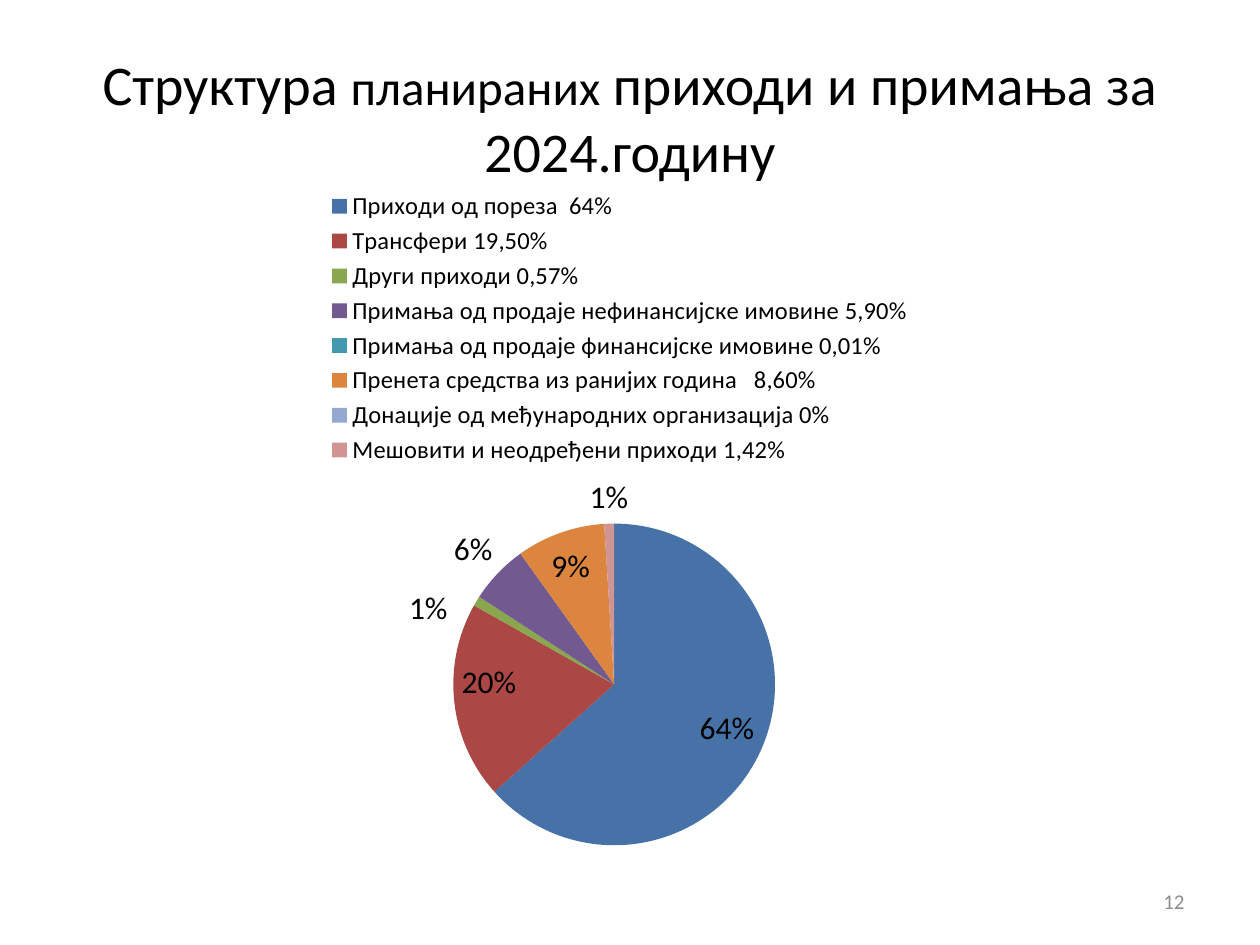
from lxml import etree
from pptx import Presentation
from pptx.chart.data import CategoryChartData
from pptx.dml.color import RGBColor
from pptx.enum.chart import XL_CHART_TYPE as ChartType, XL_LABEL_POSITION as LabelPos, XL_LEGEND_POSITION as LegendPos
from pptx.enum.text import MSO_ANCHOR as Anchor, PP_ALIGN as Align
from pptx.oxml import parse_xml
from pptx.oxml.ns import qn
from pptx.util import Inches, Pt

BLACK = RGBColor(0x00, 0x00, 0x00)
GRAY = RGBColor(0x8C, 0x8C, 0x8C)
FONT = "Calibri"
CHART_NS = "http://schemas.openxmlformats.org/drawingml/2006/chart"

IN, OUT = LabelPos.INSIDE_END, LabelPos.OUTSIDE_END
REVENUES = [
    ("Приходи од пореза  64%", 64, RGBColor(0x46, 0x72, 0xA8), IN, None),
    ("Трансфери 19,50%", 20, RGBColor(0xAB, 0x47, 0x44), IN, None),
    ("Други приходи 0,57%", 1, RGBColor(0x8A, 0xA6, 0x4F), OUT, (-0.02, 0.04)),
    ("Примања од продаје нефинансијске имовине 5,90%", 6,
     RGBColor(0x72, 0x59, 0x90), OUT, None),
    ("Примања од продаје финансијске имовине 0,01%", 0,
     RGBColor(0x42, 0x99, 0xB0), OUT, (0.03, -0.04)),
    ("Пренета средства из ранијих година   8,60%", 9,
     RGBColor(0xDC, 0x85, 0x3E), IN, (-0.01, 0.01)),
    ("Донације од међународних организација 0%", 0,
     RGBColor(0x93, 0xA9, 0xD0), None, None),
    ("Мешовити и неодређени приходи 1,42%", 1,
     RGBColor(0xD0, 0x94, 0x93), OUT, None),
]


def style_font(font, size, color=BLACK):
    font.name = FONT
    font.size = Pt(size)
    font.color.rgb = color


def add_title(slide, runs):
    sp = slide.shapes.title
    sp.left, sp.top, sp.width, sp.height = (Inches(v) for v in (0.5, 0.3, 9, 1.25))
    tf = sp.text_frame
    tf.vertical_anchor = Anchor.MIDDLE
    p = tf.paragraphs[0]
    p.alignment = Align.CENTER
    for text, size in runs:
        r = p.add_run()
        r.text = text
        style_font(r.font, size)


def make_layout(**values):
    layout = parse_xml(f'<c:layout xmlns:c="{CHART_NS}"><c:manualLayout/></c:layout>')
    for tag, value in values.items():
        etree.SubElement(layout[0], qn(f"c:{tag}")).set("val", str(value))
    return layout


def set_plot_layout(chart, x, y, w, h):
    area = chart._chartSpace.chart.plotArea
    for old in area.findall(qn("c:layout")):
        area.remove(old)
    area.insert(0, make_layout(layoutTarget="inner", xMode="edge", yMode="edge",
                               x=x, y=y, w=w, h=h))


def set_legend(chart, x, y, w, h):
    chart.has_legend = True
    legend = chart.legend
    legend.position = LegendPos.TOP
    legend.include_in_layout = False
    style_font(legend.font, 14)
    el = legend._element
    for old in el.findall(qn("c:layout")):
        el.remove(old)
    el.find(qn("c:legendPos")).addnext(
        make_layout(xMode="edge", yMode="edge", x=x, y=y, w=w, h=h))


def label_point(point, position, offset):
    label = point.data_label
    label.position = position or OUT
    el = label._get_or_add_dLbl()
    el.find(qn("c:showVal")).set("val", "1" if position else "0")
    if offset:
        el.find(qn("c:idx")).addnext(make_layout(x=offset[0], y=offset[1]))


def hide_leader_lines(labels):
    el = labels._element
    lines = el.find(qn("c:showLeaderLines"))
    if lines is None:
        lines = etree.SubElement(el, qn("c:showLeaderLines"))
    lines.set("val", "0")


def add_revenue_pie(slide):
    data = CategoryChartData()
    data.categories = [row[0] for row in REVENUES]
    data.add_series("Series 1", [row[1] for row in REVENUES])
    chart = slide.shapes.add_chart(ChartType.PIE, Inches(0.42), Inches(1.42),
                                   Inches(9), Inches(6.08), data).chart
    chart.has_title = False
    style_font(chart.font, 18)
    set_legend(chart, 0.24, 0.01, 0.52, 0.37)
    set_plot_layout(chart, 0.01, 0.45, 0.97, 0.42)
    plot = chart.plots[0]
    plot.vary_by_categories = True
    series = plot.series[0]
    labels = series.data_labels
    labels.show_value = True
    labels.number_format = '0"%"'
    labels.number_format_is_linked = False
    style_font(labels.font, 18)
    hide_leader_lines(labels)
    for i, (_, _, color, position, offset) in enumerate(REVENUES):
        point = series.points[i]
        point.format.fill.solid()
        point.format.fill.fore_color.rgb = color
        label_point(point, position, offset)


def add_page_number(slide, text):
    sp = slide.shapes.add_textbox(Inches(7.17), Inches(6.95), Inches(2.33), Inches(0.4))
    tf = sp.text_frame
    tf.word_wrap = True
    tf.vertical_anchor = Anchor.MIDDLE
    p = tf.paragraphs[0]
    p.text = text
    p.alignment = Align.RIGHT
    style_font(p.font, 12, GRAY)


def main():
    prs = Presentation()
    prs.slide_width, prs.slide_height = Inches(10), Inches(7.5)
    slide = prs.slides.add_slide(prs.slide_layouts[5])
    add_title(slide, [("Структура ", 32), ("планираних", 28),
                      (" приходи и примања за 2024.годину", 32)])
    add_revenue_pie(slide)
    add_page_number(slide, "12")
    prs.save("out.pptx")


if __name__ == "__main__":
    main()
